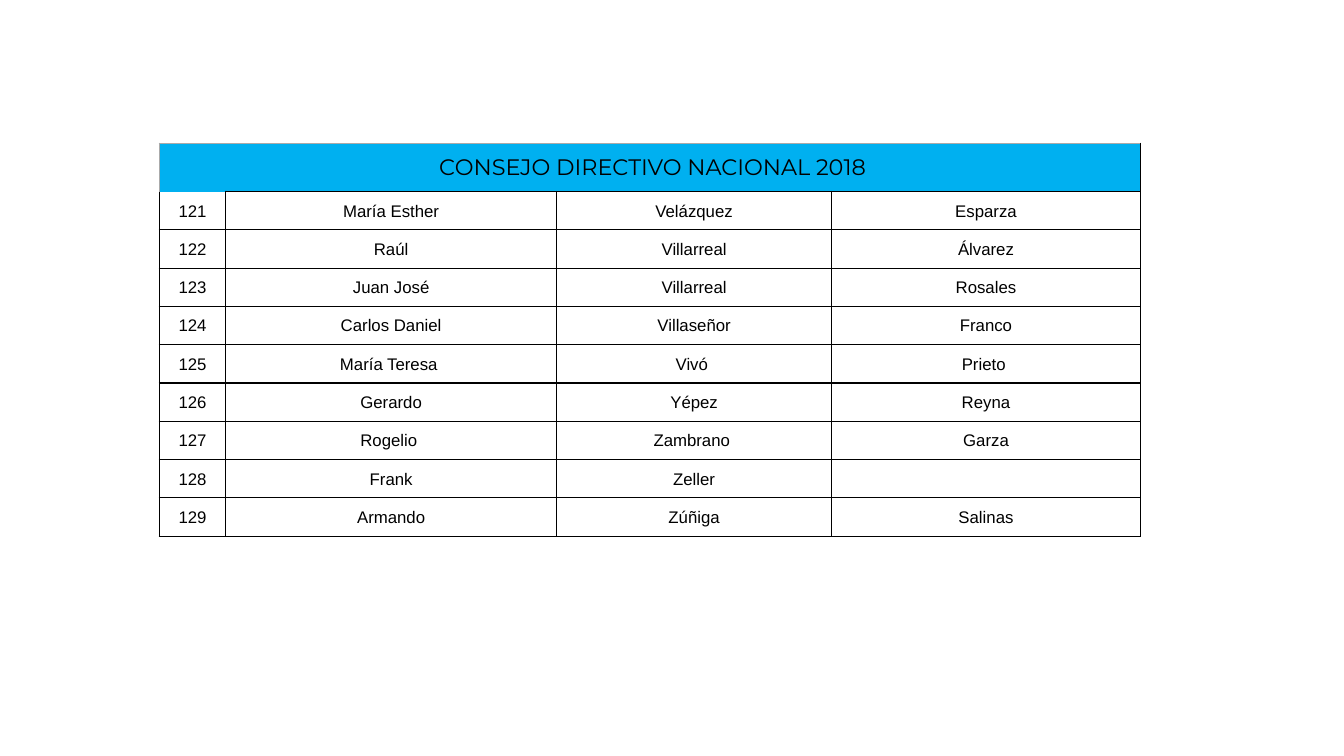
from dataclasses import dataclass
from typing import Optional

from lxml.etree import SubElement
from pptx import Presentation
from pptx.dml.color import RGBColor
from pptx.enum.text import MSO_ANCHOR, PP_ALIGN
from pptx.oxml.ns import qn
from pptx.table import _Cell
from pptx.util import Inches, Pt


@dataclass(frozen=True)
class Theme:
    header_fill: str = "00B0F0"
    body_fill: str = "FFFFFF"
    ink: str = "000000"
    header_edge: str = "AAAAAA"
    header_font: str = "Montserrat"
    body_font: str = "Arial"
    header_size: int = 16
    body_size: int = 12
    border_width: int = 1


@dataclass(frozen=True)
class Member:
    number: int
    given_names: str
    first_surname: str
    second_surname: str

    def texts(self) -> list[str]:
        return [str(self.number), self.given_names,
                self.first_surname, self.second_surname]


@dataclass(frozen=True)
class Borders:
    """Colour of each side; None leaves the side without a line."""
    left: Optional[str]
    right: Optional[str]
    top: Optional[str]
    bottom: Optional[str]


THEME = Theme()
HEADING = " CONSEJO DIRECTIVO NACIONAL 2018"
FIRST_NUMBER = 121
NAMES = [
    ("María Esther", "Velázquez", "Esparza"),
    ("Raúl", "Villarreal", "Álvarez"),
    ("Juan José", "Villarreal", "Rosales"),
    ("Carlos Daniel", "Villaseñor", "Franco"),
    ("María Teresa ", "Vivó ", "Prieto "),
    ("Gerardo", "Yépez", "Reyna"),
    ("Rogelio ", "Zambrano ", "Garza"),
    ("Frank", "Zeller", ""),
    ("Armando", "Zúñiga", "Salinas"),
]
MEMBERS = [Member(number, *names) for number, names in enumerate(NAMES, FIRST_NUMBER)]
COLUMN_WIDTHS = [0.66, 3.28, 2.73, 3.06]
HEADER_HEIGHT = 0.48
MEMBER_HEIGHT = 0.38


def set_borders(cell: _Cell, borders: Borders) -> None:
    properties = cell._tc.get_or_add_tcPr()
    sides = [("a:lnL", borders.left), ("a:lnR", borders.right),
             ("a:lnT", borders.top), ("a:lnB", borders.bottom)]
    # Border lines come before the fill in the cell properties
    for position, (tag, color) in enumerate(sides):
        line = SubElement(properties, qn(tag), w=str(Pt(THEME.border_width)))
        if color is None:
            SubElement(line, qn("a:noFill"))
        else:
            fill = SubElement(line, qn("a:solidFill"))
            SubElement(fill, qn("a:srgbClr"), val=color)
        properties.insert(position, line)


def style_cell(cell: _Cell, text: str, fill: str, font: str, size: int,
               inset: float, borders: Borders) -> None:
    cell.text = text
    cell.vertical_anchor = MSO_ANCHOR.MIDDLE
    cell.margin_left = cell.margin_right = cell.margin_top = Inches(inset)
    cell.margin_bottom = Inches(0)
    cell.fill.solid()
    cell.fill.fore_color.rgb = RGBColor.from_string(fill)
    paragraph = cell.text_frame.paragraphs[0]
    paragraph.alignment = PP_ALIGN.CENTER
    paragraph.font.name = font
    paragraph.font.size = Pt(size)
    paragraph.font.color.rgb = RGBColor.from_string(THEME.ink)
    set_borders(cell, borders)


def main() -> None:
    deck = Presentation()
    deck.slide_width, deck.slide_height = Inches(13.33), Inches(7.5)
    slide = deck.slides.add_slide(deck.slide_layouts[6])

    # Council table
    council = slide.shapes.add_table(
        len(MEMBERS) + 1, len(COLUMN_WIDTHS), Inches(1.58), Inches(1.42),
        Inches(sum(COLUMN_WIDTHS)),
        Inches(HEADER_HEIGHT + MEMBER_HEIGHT * len(MEMBERS))).table
    council.first_row = council.horz_banding = False
    for column, width in zip(council.columns, COLUMN_WIDTHS):
        column.width = Inches(width)
    for index, row in enumerate(council.rows):
        row.height = Inches(MEMBER_HEIGHT if index else HEADER_HEIGHT)

    # Heading across all columns
    heading = council.cell(0, 0)
    heading.merge(council.cell(0, len(COLUMN_WIDTHS) - 1))
    style_cell(heading, HEADING, THEME.header_fill, THEME.header_font,
               THEME.header_size, 0,
               Borders(THEME.header_edge, THEME.ink, THEME.header_edge, None))

    # Members; the first number has no line above it
    for row_index, member in enumerate(MEMBERS, 1):
        for column_index, text in enumerate(member.texts()):
            top = None if (row_index, column_index) == (1, 0) else THEME.ink
            style_cell(council.cell(row_index, column_index), text,
                       THEME.body_fill, THEME.body_font, THEME.body_size, 0.01,
                       Borders(THEME.ink, THEME.ink, top, THEME.ink))

    deck.save("out.pptx")


if __name__ == "__main__":
    main()
